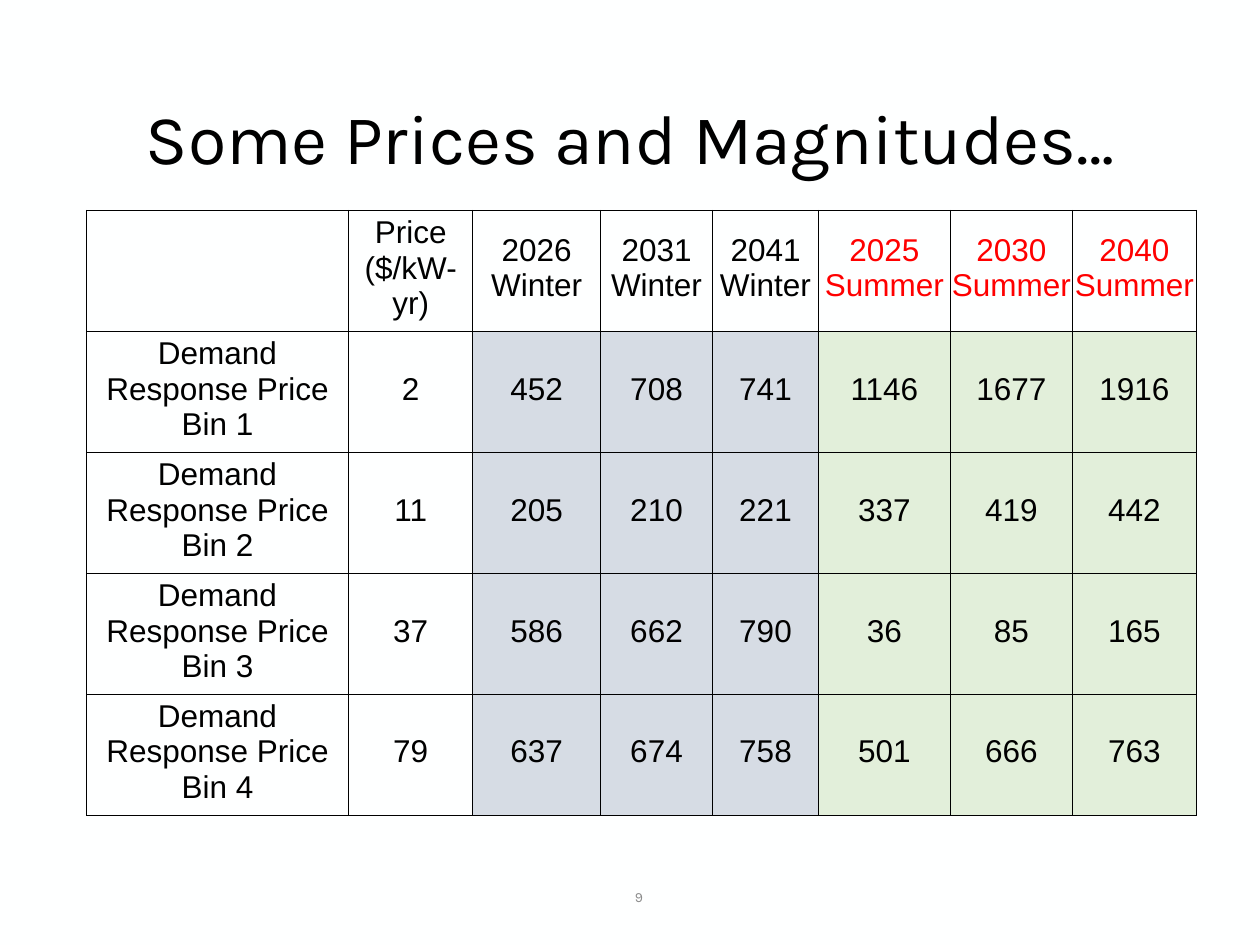
from dataclasses import dataclass

from lxml import etree
from pptx import Presentation
from pptx.dml.color import RGBColor
from pptx.enum.text import MSO_ANCHOR, PP_ALIGN
from pptx.oxml.ns import qn
from pptx.util import Pt

MIDDLE = MSO_ANCHOR.MIDDLE
CENTER = PP_ALIGN.CENTER


@dataclass(frozen=True)
class Theme:
    background: str = "FEFFFF"
    text: str = "000000"
    summer_text: str = "FF0000"
    winter_fill: str = "D6DCE4"
    summer_fill: str = "E2EFDA"
    page_number: str = "8C8C8C"
    heading_font: str = "Karla"
    table_font: str = "Arial"
    title_size: int = 40
    table_size: int = 18
    page_number_size: int = 8
    border_width: float = 0.5


THEME = Theme()


def write_centered(text_frame, text, font_name, size, color):
    text_frame.text = text
    text_frame.word_wrap = True
    paragraph = text_frame.paragraphs[0]
    paragraph.alignment = CENTER
    for run in paragraph.runs:
        run.font.name = font_name
        run.font.size = Pt(size)
        run.font.color.rgb = RGBColor.from_string(color)


def add_borders(cell):
    """Draw a thin line on all four sides; call before filling the cell."""
    properties = cell._tc.get_or_add_tcPr()
    for side in ("a:lnL", "a:lnR", "a:lnT", "a:lnB"):
        line = etree.SubElement(properties, qn(side), w=str(Pt(THEME.border_width)))
        solid_fill = etree.SubElement(line, qn("a:solidFill"))
        etree.SubElement(solid_fill, qn("a:srgbClr"), val=THEME.text)


presentation = Presentation()
presentation.slide_width = Pt(720)
presentation.slide_height = Pt(540)
slide = presentation.slides.add_slide(presentation.slide_layouts[6])
slide.background.fill.solid()
slide.background.fill.fore_color.rgb = RGBColor.from_string(THEME.background)

# Title
title = slide.shapes.add_textbox(Pt(49.5), Pt(28.8), Pt(621), Pt(104.4))
title.text_frame.vertical_anchor = MIDDLE
write_centered(title.text_frame, "Some Prices and Magnitudes…",
               THEME.heading_font, THEME.title_size, THEME.text)
title.text_frame.paragraphs[0].line_spacing = 0.9

# Price table
rows = [
    ["", "Price ($/kW-yr)", "2026 Winter", "2031 Winter", "2041 Winter",
     "2025 Summer", "2030 Summer", "2040 Summer"],
    ["Demand Response Price Bin 1", 2, 452, 708, 741, 1146, 1677, 1916],
    ["Demand Response Price Bin 2", 11, 205, 210, 221, 337, 419, 442],
    ["Demand Response Price Bin 3", 37, 586, 662, 790, 36, 85, 165],
    ["Demand Response Price Bin 4", 79, 637, 674, 758, 501, 666, 763],
]
column_widths = [149.8, 71, 73, 64, 60.6, 75.3, 69.8, 70.8]
row_heights = [69.1] + [64.8] * 4
FIRST_WINTER, FIRST_SUMMER = 2, 5

table_frame = slide.shapes.add_table(
    len(rows), len(column_widths), Pt(49.4), Pt(120.2),
    Pt(sum(column_widths)), Pt(sum(row_heights)))
table = table_frame.table
table.first_row = False
table.horz_banding = False
for column, width in zip(table.columns, column_widths):
    column.width = Pt(width)

for row_index, values in enumerate(rows):
    table.rows[row_index].height = Pt(row_heights[row_index])
    is_header = row_index == 0
    for column_index, value in enumerate(values):
        cell = table.cell(row_index, column_index)
        is_summer = column_index >= FIRST_SUMMER
        cell.vertical_anchor = MIDDLE
        cell.margin_left = cell.margin_right = cell.margin_top = Pt(0.7)
        cell.margin_bottom = Pt(3.6)
        color = THEME.summer_text if is_header and is_summer else THEME.text
        write_centered(cell.text_frame, str(value), THEME.table_font,
                       THEME.table_size, color)
        add_borders(cell)
        if is_header or column_index < FIRST_WINTER:
            cell.fill.background()
        else:
            cell.fill.solid()
            fill = THEME.summer_fill if is_summer else THEME.winter_fill
            cell.fill.fore_color.rgb = RGBColor.from_string(fill)

# Page number
page_number = slide.shapes.add_textbox(Pt(344.2), Pt(498.2), Pt(41.8), Pt(28.8))
page_number.text_frame.vertical_anchor = MIDDLE
write_centered(page_number.text_frame, "9", THEME.heading_font,
               THEME.page_number_size, THEME.page_number)

presentation.save("out.pptx")
